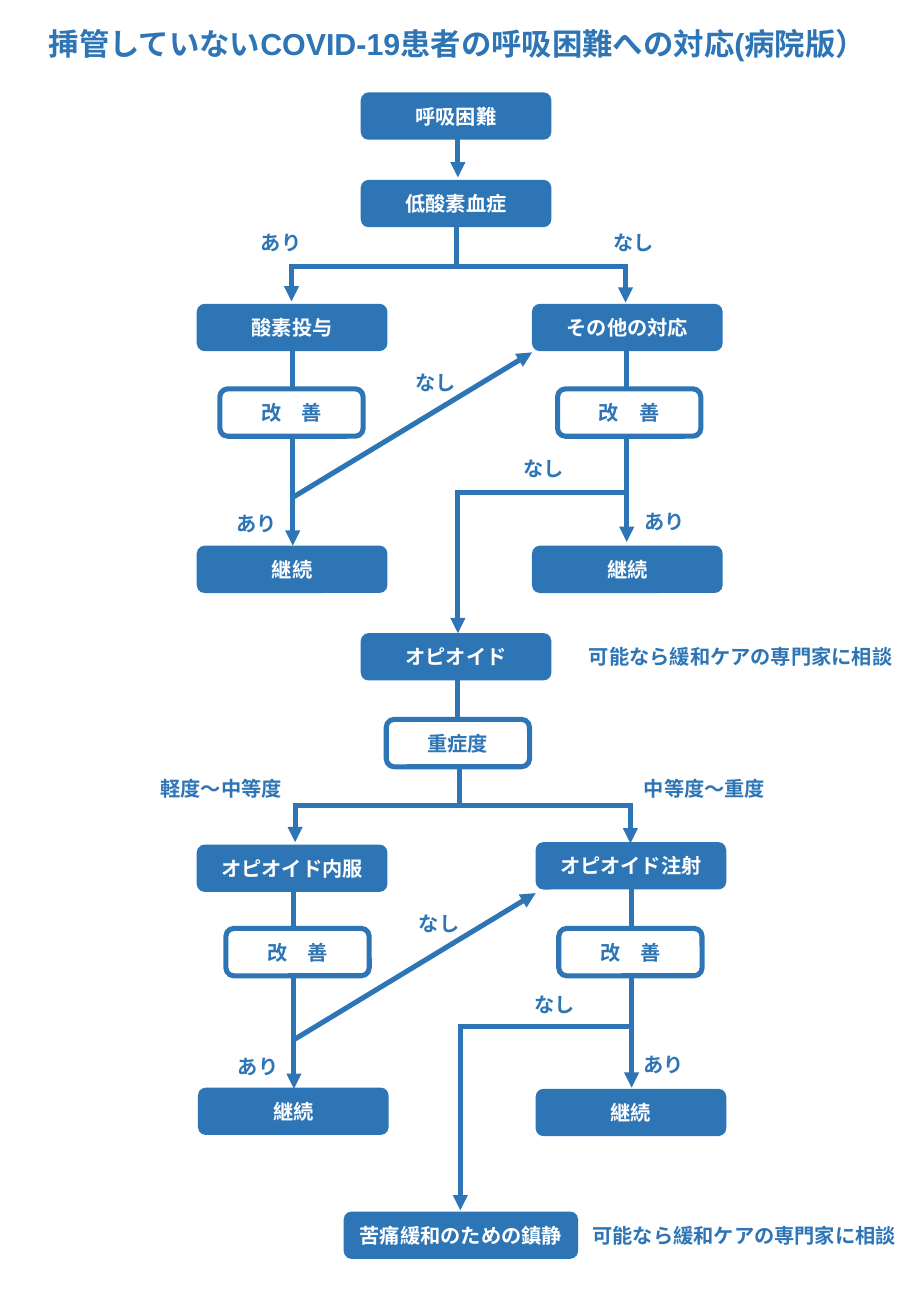
from pptx import Presentation
from pptx.dml.color import RGBColor
from pptx.enum.shapes import MSO_CONNECTOR, MSO_SHAPE
from pptx.enum.text import MSO_ANCHOR, PP_ALIGN
from pptx.oxml.ns import qn
from pptx.util import Inches, Pt
from lxml.etree import SubElement

COLORS = {"blue": "2E75B6", "white": "FFFFFF"}
BOX_HEIGHT = 0.39
STEP_WIDTH, CHECK_WIDTH, SEDATION_WIDTH = 1.57, 1.18, 1.93
LABEL_WIDTH, SEVERITY_WIDTH, NOTE_WIDTH = 0.77, 1.22, 2.72
LABEL_HEIGHT = 0.3

TITLE = ("挿管していないCOVID-19患者の呼吸困難への対応(病院版）", 0.17, 0.16, 7.19, 0.4)

STEPS = [
    ("呼吸困難", 2.97, 0.76, STEP_WIDTH),
    ("低酸素血症", 2.97, 1.48, STEP_WIDTH),
    ("酸素投与", 1.62, 2.5, STEP_WIDTH),
    ("その他の対応", 4.38, 2.5, STEP_WIDTH),
    ("継続", 1.62, 4.49, STEP_WIDTH),
    ("継続", 4.38, 4.49, STEP_WIDTH),
    ("オピオイド", 2.97, 5.21, STEP_WIDTH),
    ("オピオイド内服", 1.62, 6.95, STEP_WIDTH),
    ("オピオイド注射", 4.41, 6.93, STEP_WIDTH),
    ("継続", 1.63, 8.95, STEP_WIDTH),
    ("継続", 4.41, 8.96, STEP_WIDTH),
    ("苦痛緩和のための鎮静", 2.83, 9.97, SEDATION_WIDTH),
]
CHECKS = [
    ("改　善", 1.81, 3.2),
    ("改　善", 4.59, 3.2),
    ("重症度", 3.18, 5.92),
    ("改　善", 1.86, 7.64),
    ("改　善", 4.6, 7.64),
]
LABELS = [
    ("あり", 2.05, 1.85),
    ("なし", 4.95, 1.85),
    ("なし", 3.32, 3),
    ("なし", 4.21, 3.71),
    ("あり", 1.85, 4.16),
    ("あり", 5.21, 4.14),
    ("なし", 3.35, 7.45),
    ("なし", 4.3, 8.12),
    ("あり", 1.86, 8.63),
    ("あり", 5.2, 8.61),
]
SEVERITIES = [("軽度～中等度", 1.21, 6.34), ("中等度～重度", 5.19, 6.34)]
NOTES = [
    ("可能なら緩和ケアの専門家に相談", 4.75, 5.25),
    ("可能なら緩和ケアの専門家に相談", 4.78, 10.02),
]
ARROWS = [
    (3.77, 1.14, 3.77, 1.46),
    (2.4, 2.17, 2.4, 2.48),
    (5.15, 2.17, 5.15, 2.49),
    (2.41, 2.83, 2.41, 4.49),
    (5.16, 2.85, 5.16, 4.46),
    (2.4, 4.1, 4.38, 2.9),
    (3.77, 4.03, 3.77, 5.21),
    (2.43, 6.62, 2.43, 6.93),
    (5.19, 6.62, 5.19, 6.94),
    (2.42, 7.3, 2.42, 8.96),
    (5.2, 7.26, 5.2, 8.95),
    (2.43, 8.55, 4.41, 7.35),
    (3.79, 8.43, 3.79, 9.96),
]
BRANCHES = [
    (3.76, 1.86, 3.76, 2.18),
    (2.41, 2.19, 5.17, 2.19),
    (3.76, 4.05, 5.18, 4.05),
    (3.77, 5.59, 3.77, 5.91),
    (3.78, 6.31, 3.78, 6.62),
    (2.41, 6.63, 5.21, 6.63),
    (3.8, 8.45, 5.18, 8.45),
]


def color(name):
    return RGBColor.from_string(COLORS[name])


def write(shape, text, font, size, ink, align):
    shape.text_frame.word_wrap = True
    para = shape.text_frame.paragraphs[0]
    para.alignment = align
    span = para.add_run()
    span.text = text
    for name, value in {"name": font, "size": Pt(size), "bold": True}.items():
        setattr(span.font, name, value)
    span.font.color.rgb = color(ink)


def add_box(page, text, left, top, width, fill, ink):
    area = [Inches(n) for n in (left, top, width, BOX_HEIGHT)]
    box = page.shapes.add_shape(MSO_SHAPE.ROUNDED_RECTANGLE, *area)
    box.shadow.inherit = False
    box.fill.solid()
    box.fill.fore_color.rgb = color(fill)
    if fill == "white":
        box.line.color.rgb = color("blue")
        box.line.width = Pt(3)
    else:
        box.line.fill.background()
    box.text_frame.vertical_anchor = MSO_ANCHOR.MIDDLE
    write(box, text, "Arial", 12, ink, PP_ALIGN.CENTER)


def add_text(page, text, left, top, width, height=LABEL_HEIGHT,
             font="Calibri", size=12, align=PP_ALIGN.LEFT):
    area = [Inches(n) for n in (left, top, width, height)]
    write(page.shapes.add_textbox(*area), text, font, size, "blue", align)


def add_line(page, ends, arrow):
    line = page.shapes.add_connector(MSO_CONNECTOR.STRAIGHT, *[Inches(n) for n in ends])
    line.line.color.rgb = color("blue")
    line.line.width = Pt(3)
    properties = line._element.spPr
    if arrow:
        SubElement(properties.find(qn("a:ln")), qn("a:tailEnd"), type="triangle")
    SubElement(properties, qn("a:effectLst"))


def main():
    deck = Presentation()
    deck.slide_width, deck.slide_height = Inches(7.5), Inches(10.83)
    page = deck.slides.add_slide(deck.slide_layouts[6])

    for lines, arrow in ((BRANCHES, False), (ARROWS, True)):
        for ends in lines:
            add_line(page, ends, arrow)
    for step in STEPS:
        add_box(page, *step, "blue", "white")
    for check in CHECKS:
        add_box(page, *check, CHECK_WIDTH, "white", "blue")

    add_text(page, *TITLE, font="Arial", size=18, align=PP_ALIGN.CENTER)
    for texts, width, align in (
        (LABELS, LABEL_WIDTH, PP_ALIGN.LEFT),
        (SEVERITIES, SEVERITY_WIDTH, PP_ALIGN.CENTER),
        (NOTES, NOTE_WIDTH, PP_ALIGN.LEFT),
    ):
        for text in texts:
            add_text(page, *text, width, align=align)

    deck.save("out.pptx")


if __name__ == "__main__":
    main()
